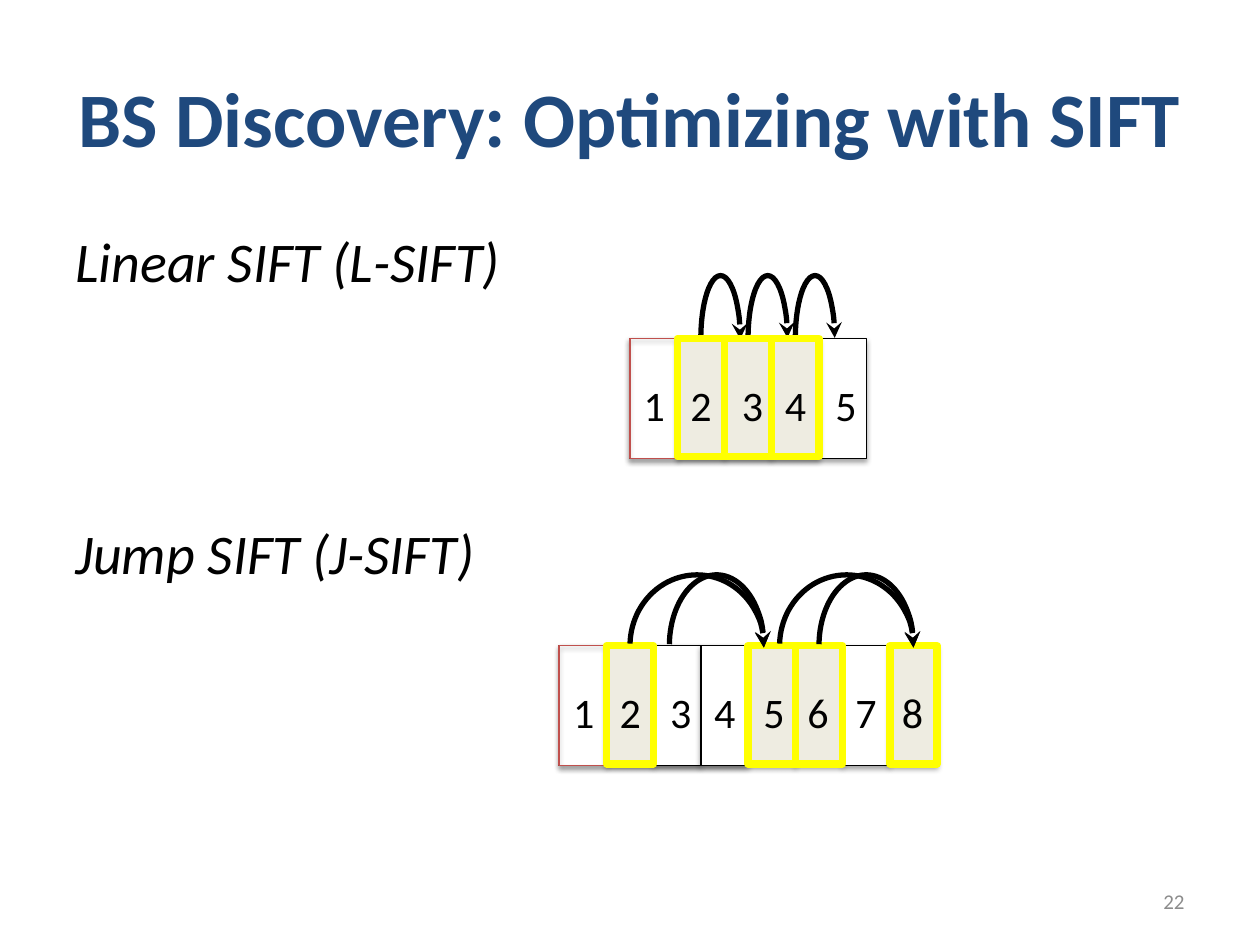
from lxml.etree import SubElement
from pptx import Presentation
from pptx.dml.color import RGBColor
from pptx.enum.shapes import MSO_SHAPE
from pptx.enum.text import MSO_ANCHOR, MSO_AUTO_SIZE, PP_ALIGN
from pptx.oxml.ns import qn
from pptx.util import Pt

NAVY = RGBColor(0x1F, 0x49, 0x7D)
BLACK = RGBColor(0x00, 0x00, 0x00)
WHITE = RGBColor(0xFF, 0xFF, 0xFF)
RED = RGBColor(0xC0, 0x50, 0x4D)
TAN = RGBColor(0xEE, 0xEC, 0xE1)
YELLOW = RGBColor(0xFF, 0xFF, 0x00)
GRAY = RGBColor(0x8C, 0x8C, 0x8C)
CELL_W, CELL_H = 27, 68.4


def put_text(sp, text, size=24, color=BLACK, bold=False, italic=False,
             align=PP_ALIGN.LEFT, anchor=MSO_ANCHOR.TOP, before=0):
    """Write one formatted paragraph into a shape and return it."""
    tf = sp.text_frame
    tf.word_wrap = True
    tf.vertical_anchor = anchor
    p = tf.paragraphs[0]
    p.alignment = align
    p.space_before = Pt(before)
    r = p.add_run()
    r.text = text
    r.font.name = "Calibri"
    r.font.size = Pt(size)
    r.font.bold = bold
    r.font.italic = italic
    r.font.color.rgb = color
    return p


def add_box(shapes, x, y, w, h):
    """Add an empty text box."""
    return shapes.add_textbox(Pt(x), Pt(y), Pt(w), Pt(h))


def add_heading(s, text, y):
    """Add an italic heading with a hanging indent."""
    p = put_text(add_box(s.shapes, 36, y, 648, 49.5), text,
                 size=32, italic=True, before=6.4)
    pPr = p._p.get_or_add_pPr()
    pPr.set("marL", str(Pt(27)))
    pPr.set("indent", str(Pt(-27)))


def add_shape(s, kind, x, y, w, h, fill, line, width):
    """Add a preset shape without a shadow."""
    sp = s.shapes.add_shape(kind, Pt(x), Pt(y), Pt(w), Pt(h))
    if fill is None:
        sp.fill.background()
    else:
        sp.fill.solid()
        sp.fill.fore_color.rgb = fill
    sp.line.color.rgb = line
    sp.line.width = Pt(width)
    sp.shadow.inherit = False
    return sp


def add_cell(s, x, y, w=CELL_W, fill=WHITE, line=BLACK):
    """Add a channel cell with a soft shadow below it."""
    sp = add_shape(s, MSO_SHAPE.RECTANGLE, x, y, w, CELL_H, fill, line, 0.75)
    effects = sp._element.spPr.find(qn("a:effectLst"))
    shadow = SubElement(effects, qn("a:outerShdw"), blurRad=str(Pt(3.1)),
                        dist=str(Pt(1.8)), dir="5400000", rotWithShape="0")
    color = SubElement(shadow, qn("a:srgbClr"), val=str(BLACK))
    SubElement(color, qn("a:alpha"), val="35000")


def add_strip(s, x, y, count):
    """Add a row of cells, the first one outlined in red."""
    add_cell(s, x, y, w=5 * CELL_W)
    add_cell(s, x, y, fill=None, line=RED)
    for i in range(1, count):
        if i != 4:
            add_cell(s, x + i * CELL_W, y)


def add_highlights(s, x, y, channels):
    """Frame the given channels in yellow."""
    for n in channels:
        add_shape(s, MSO_SHAPE.RECTANGLE, x + (n - 1) * CELL_W, y,
                  CELL_W, 67.5, TAN, YELLOW, 4.25)


def add_digits(s, lefts, y):
    """Number the cells from 1 in one group."""
    group = s.shapes.add_group_shape()
    for n, x in enumerate(lefts, 1):
        sp = add_box(group.shapes, x, y, 22.3, 36)
        put_text(sp, str(n), align=PP_ALIGN.CENTER)
        sp.text_frame.auto_size = MSO_AUTO_SIZE.SHAPE_TO_FIT_TEXT


def add_jump(s, x, y, w, h, start=109.09, end=1.07):
    """Add an arc that ends in an arrowhead."""
    sp = add_shape(s, MSO_SHAPE.ARC, x, y, w, h, None, BLACK, 3)
    sp.adjustments[0] = start
    sp.adjustments[1] = end
    SubElement(sp._element.spPr.find(qn("a:ln")), qn("a:tailEnd"), type="stealth")


def add_linear(s, x=360, y=193.5):
    """Draw the linear scan over five channels."""
    add_strip(s, x, y, 5)
    for i, end in enumerate((1.07, 214.85, 214.85)):
        add_jump(s, x + 40.5 + i * CELL_W, 157.5, 22.5, 72, 112.46, end)
    add_highlights(s, x, y, (2, 3, 4))
    add_digits(s, (360.7, 387.4, 416.9, 441.4, 470.2), 213.1)


def add_jumping(s, x=319.5, y=369):
    """Draw the jumping scan over eight channels."""
    add_strip(s, x, y, 8)
    add_highlights(s, x, y, (2, 5, 6, 8))
    add_digits(s, (320.4, 347, 375.8, 401, 429.1, 454.3, 481.7, 508.3), 388.5)
    for right in (436.5, 522):
        for w in (76.5, 54):
            add_jump(s, right - w, 328.5, w, 81)


def main():
    """Build and save the slide."""
    prs = Presentation()
    prs.slide_width, prs.slide_height = Pt(720), Pt(540)
    s = prs.slides.add_slide(prs.slide_layouts[5])
    title = s.shapes.title
    title.left, title.top, title.width, title.height = Pt(36), Pt(21.6), Pt(648), Pt(90)
    put_text(title, "BS Discovery: Optimizing with SIFT", size=44, color=NAVY,
             bold=True, align=PP_ALIGN.CENTER, anchor=MSO_ANCHOR.MIDDLE)
    add_heading(s, "Linear SIFT (L-SIFT)", 126)
    add_linear(s)
    add_heading(s, "Jump SIFT (J-SIFT)", 292.5)
    add_jumping(s)
    put_text(add_box(s.shapes, 516, 500.5, 168, 28.75), "22", size=12, color=GRAY,
             align=PP_ALIGN.RIGHT, anchor=MSO_ANCHOR.MIDDLE)
    prs.save("out.pptx")


if __name__ == "__main__":
    main()
